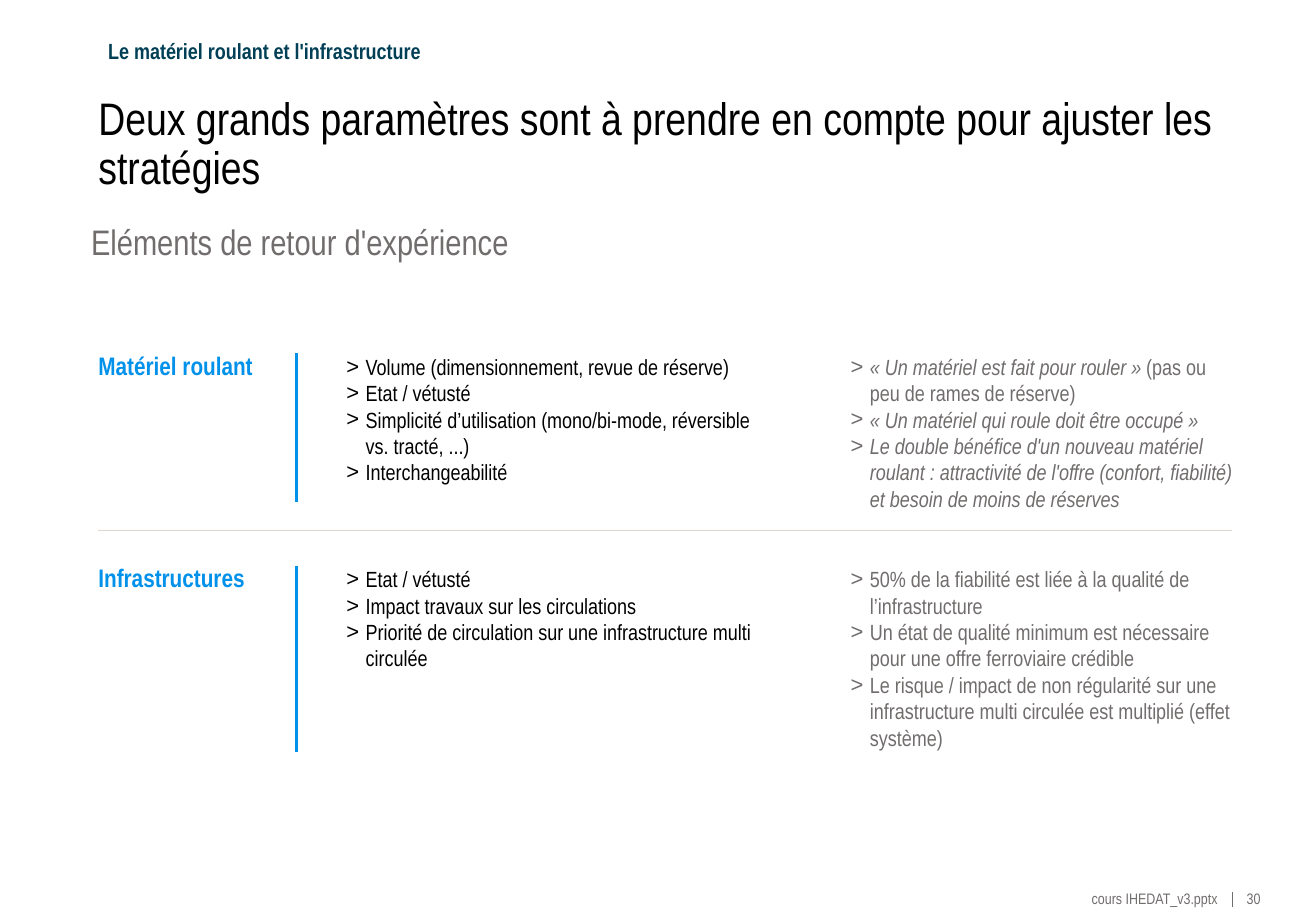
"""Build the slide on rolling stock and infrastructure parameters."""
from lxml.etree import SubElement
from pptx import Presentation
from pptx.dml.color import RGBColor
from pptx.enum.shapes import MSO_CONNECTOR
from pptx.enum.text import MSO_ANCHOR, PP_ALIGN
from pptx.oxml.ns import qn
from pptx.util import Inches, Pt

FONT = "Arial Narrow"
BLACK = RGBColor(0x00, 0x00, 0x00)
GREY = RGBColor(0x71, 0x6D, 0x6D)
BLUE = RGBColor(0x00, 0x91, 0xEA)
NAVY = RGBColor(0x00, 0x3F, 0x56)
SAND = RGBColor(0xDF, 0xD6, 0xCF)

TOPIC = "Le matériel roulant et l'infrastructure"
TITLE = "Deux grands paramètres sont à prendre en compte pour ajuster les stratégies"
LEAD = "Eléments de retour d'expérience"
FOOTER = "cours IHEDAT_v3.pptx"
PAGE = "30"

# Each point is a pair: italic part, upright part.
BLOCKS = [
    {
        "name": "Matériel roulant", "top": 2.91, "end": 4.13,
        "facts": [
            ("", "Volume (dimensionnement, revue de réserve)"),
            ("", "Etat / vétusté"),
            ("", "Simplicité d’utilisation (mono/bi-mode, réversible vs. tracté, ...)"),
            ("", "Interchangeabilité"),
        ],
        "views": [
            ("« Un matériel est fait pour rouler » ", "(pas ou peu de rames de réserve)"),
            ("« Un matériel qui roule doit être occupé »", ""),
            ("Le double bénéfice d'un nouveau matériel roulant : attractivité de l'offre "
             "(confort, fiabilité) et besoin de moins de réserves", ""),
        ],
    },
    {
        "name": "Infrastructures", "top": 4.66, "end": 6.19,
        "facts": [
            ("", "Etat / vétusté"),
            ("", "Impact travaux sur les circulations"),
            ("", "Priorité de circulation sur une infrastructure multi circulée"),
        ],
        "views": [
            ("", "50% de la fiabilité est liée à la qualité de l’infrastructure"),
            ("", "Un état de qualité minimum est nécessaire pour une offre ferroviaire crédible"),
            ("", "Le risque / impact de non régularité sur une infrastructure multi circulée "
                 "est multiplié (effet système)"),
        ],
    },
]

LEFT, RIGHT = 0.81, 10.14
BAR = 2.44
INDENT = 0.16


def add_mark(para):
    props = para._p.get_or_add_pPr()
    props.set("marL", str(Inches(INDENT)))
    props.set("indent", str(-Inches(INDENT)))
    SubElement(props, qn("a:buFont")).set("typeface", "Arial")
    SubElement(props, qn("a:buChar")).set("char", ">")


def add_text(slide, text, box, size=13, color=BLACK, bold=False, wrap=True,
             align=PP_ALIGN.LEFT, anchor=MSO_ANCHOR.TOP, space=0.9, marks=False):
    frame = slide.shapes.add_textbox(*map(Inches, box)).text_frame
    frame.margin_left = frame.margin_right = 0
    frame.margin_top = frame.margin_bottom = 0
    frame.word_wrap = wrap
    frame.vertical_anchor = anchor
    points = [("", text)] if isinstance(text, str) else text
    for i, point in enumerate(points):
        para = frame.add_paragraph() if i else frame.paragraphs[0]
        if marks:
            add_mark(para)
        para.alignment = align
        para.line_spacing = space
        for part, slant in zip(point, (True, False)):
            if part:
                run = para.add_run()
                run.text = part
                font = run.font
                font.name, font.size = FONT, Pt(size)
                font.bold, font.italic = bold, slant
                font.color.rgb = color


def add_line(slide, start, end, color, width=0.75):
    line = slide.shapes.add_connector(MSO_CONNECTOR.STRAIGHT, *map(Inches, start + end))
    line.line.color.rgb = color
    line.line.width = Pt(width)
    SubElement(line._element.spPr, qn("a:effectLst"))


def main():
    deck = Presentation()
    deck.slide_width, deck.slide_height = Inches(10.83), Inches(7.5)
    slide = deck.slides.add_slide(deck.slide_layouts[6])

    add_text(slide, TOPIC, (0.89, 0.33, 2.59, 0.2), color=NAVY, bold=True,
             wrap=False, anchor=MSO_ANCHOR.MIDDLE)
    add_text(slide, TITLE, (LEFT, 0.79, 9.34, 0.82), size=27)
    add_text(slide, LEAD, (0.75, 1.85, 9.34, 0.33), size=21, color=GREY)

    for block in BLOCKS:
        top, end = block["top"], block["end"]
        tall = end - top
        add_text(slide, block["name"], (LEFT, top, 1.62, 0.76), size=15,
                 color=BLUE, bold=True)
        add_line(slide, (BAR, top), (BAR, end), BLUE, width=1.25)
        add_text(slide, block["facts"], (2.85, top, 3.47, tall), space=1.0, marks=True)
        add_text(slide, block["views"], (7, top, RIGHT - 7, tall), color=GREY,
                 space=1.0, marks=True)
    add_line(slide, (LEFT, 4.37), (RIGHT, 4.37), SAND)

    add_text(slide, FOOTER, (8.96, 7.34, 1.06, 0.14), size=9, color=GREY,
             wrap=False, align=PP_ALIGN.RIGHT)
    add_line(slide, (RIGHT, 7.34), (RIGHT, 7.47), GREY)
    add_text(slide, PAGE, (10.26, 7.34, 0.13, 0.14), size=9, color=GREY, wrap=False)
    deck.save("out.pptx")


if __name__ == "__main__":
    main()
